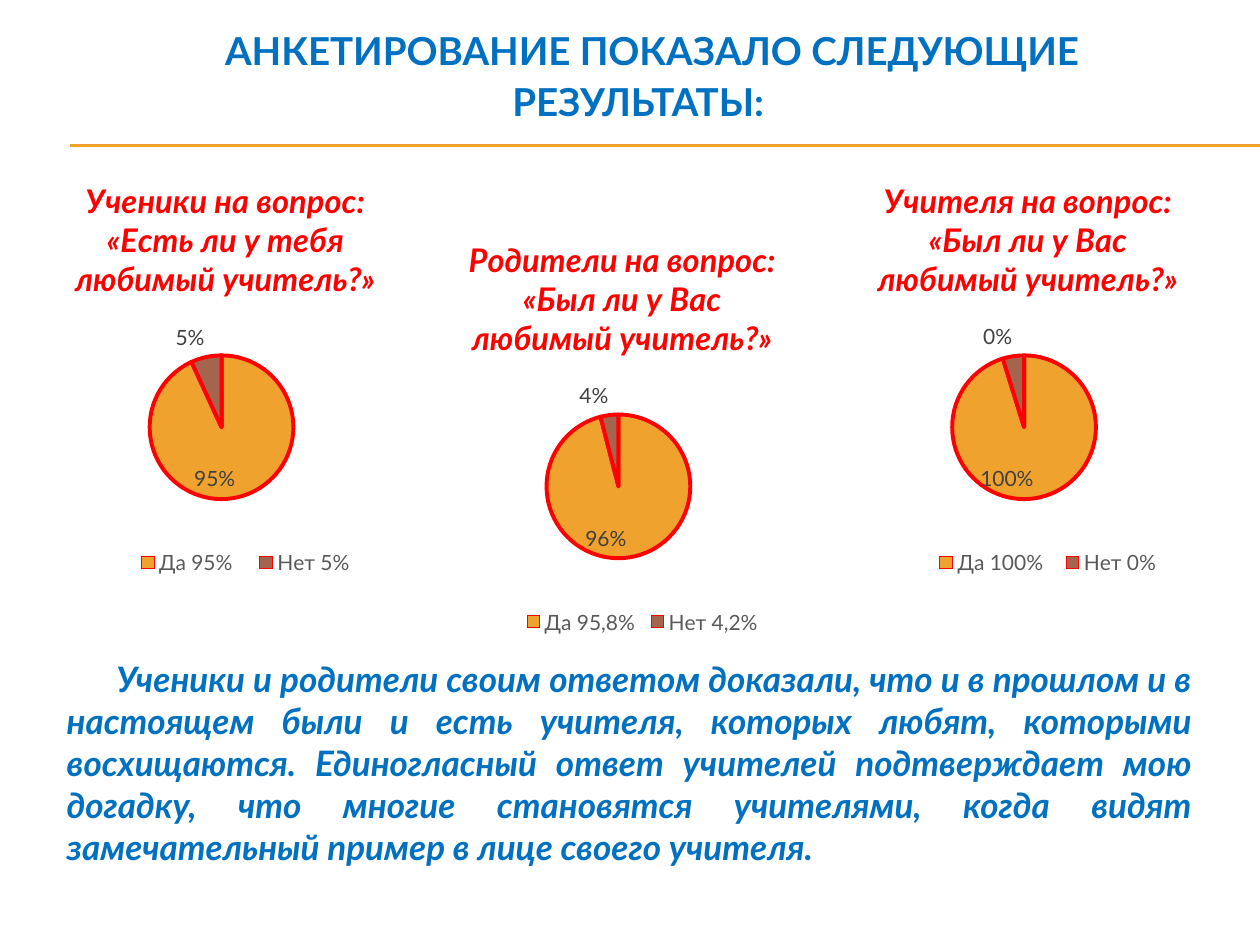
from dataclasses import dataclass

from lxml.etree import SubElement
from pptx import Presentation
from pptx.chart.data import CategoryChartData
from pptx.dml.color import RGBColor
from pptx.enum.chart import XL_CHART_TYPE, XL_LABEL_POSITION, XL_LEGEND_POSITION
from pptx.enum.shapes import MSO_CONNECTOR
from pptx.enum.text import MSO_ANCHOR, PP_ALIGN
from pptx.oxml import parse_xml
from pptx.oxml.ns import nsdecls, qn
from pptx.util import Pt


@dataclass(frozen=True)
class Theme:
    font: str = "Lato"
    heading: str = "0070C0"
    question: str = "FF0000"
    legend: str = "595959"
    label: str = "404040"
    rule: str = "F0A22E"
    slices: tuple = ("F0A22E", "A5644E")
    heading_size: float = 22
    question_size: float = 18.6
    conclusion_size: float = 20
    chart_size: float = 12


THEME = Theme()
CHART_SIZE = (229, 249)
# left, top, question, (category, value, label override) for each answer
SURVEYS = [
    (14.4, 88.6, "Ученики на вопрос: «Есть ли у тебя любимый учитель?»",
     [("Да 95%", 0.95, None), ("Нет 5%", 0.07, "5%")]),
    (241.2, 122.4, "Родители на вопрос: «Был ли у Вас любимый учитель?»",
     [("Да 95,8%", 0.96, None), ("Нет 4,2%", 0.04, None)]),
    (473, 88.6, "Учителя на вопрос: «Был ли у Вас любимый учитель?»",
     [("Да 100%", 1, None), ("Нет 0%", 0.05, "0%")]),
]
CONCLUSION = (
    "Ученики и родители своим ответом доказали, что и в прошлом и в настоящем "
    "были и есть учителя, которых любят, которыми восхищаются. Единогласный "
    "ответ учителей подтверждает мою догадку, что многие становятся учителями, "
    "когда видят замечательный пример в лице своего учителя."
)


def style_font(font, size, color, bold=False, italic=False):
    font.name = THEME.font
    font.size = Pt(size)
    font.color.rgb = RGBColor.from_string(color)
    font.bold = bold
    font.italic = italic


def add_text(slide, box, text, size, align, indent, italic=False):
    """Add a one-paragraph text box with a first-line indent."""
    frame = slide.shapes.add_textbox(*map(Pt, box)).text_frame
    frame.word_wrap = True
    paragraph = frame.paragraphs[0]
    paragraph.text = text
    paragraph.alignment = align
    paragraph._p.get_or_add_pPr().set("indent", str(Pt(indent)))
    style_font(paragraph.runs[0].font, size, THEME.heading, True, italic)
    return frame


def add_rule(slide, y):
    rule = slide.shapes.add_connector(
        MSO_CONNECTOR.STRAIGHT, Pt(40.3), Pt(y), Pt(720), Pt(y))
    rule.line.color.rgb = RGBColor.from_string(THEME.rule)
    rule.line.width = Pt(0.75)
    SubElement(rule._element.spPr, qn("a:effectLst"))


def manual_layout(x, y, w, h, inner=False):
    """Return a chart layout given in fractions of the chart area."""
    target = '<c:layoutTarget val="inner"/>' if inner else ""
    return parse_xml(
        f'<c:layout {nsdecls("c")}><c:manualLayout>{target}'
        '<c:xMode val="edge"/><c:yMode val="edge"/>'
        f'<c:x val="{x}"/><c:y val="{y}"/><c:w val="{w}"/><c:h val="{h}"/>'
        '</c:manualLayout></c:layout>')


def set_layout(element, layout, index):
    for old in element.findall(qn("c:layout")):
        element.remove(old)
    element.insert(index, layout)


def style_slice(point, color, position, override):
    point.format.fill.solid()
    point.format.fill.fore_color.rgb = RGBColor.from_string(color)
    point.format.line.color.rgb = RGBColor.from_string(THEME.question)
    point.format.line.width = Pt(2.25)
    label = point.data_label
    if override:
        paragraph = label.text_frame.paragraphs[0]
        paragraph.text = override
        font = paragraph.runs[0].font
    else:
        font = label.font
    style_font(font, THEME.chart_size, THEME.label)
    label.position = position


def add_survey_pie(slide, left, top, question, answers):
    data = CategoryChartData(number_format="0%")
    data.categories = [name for name, _, _ in answers]
    data.add_series("Series 1", [value for _, value, _ in answers])
    chart = slide.shapes.add_chart(
        XL_CHART_TYPE.PIE, Pt(left), Pt(top), *map(Pt, CHART_SIZE), data).chart
    style_font(chart.font, 10, "000000")

    chart.has_title = True
    title = chart.chart_title.text_frame.paragraphs[0]
    title.text = question
    style_font(title.runs[0].font, THEME.question_size, THEME.question, True, True)
    chart.chart_title.include_in_layout = False

    chart.has_legend = True
    legend = chart.legend
    legend.position = XL_LEGEND_POSITION.BOTTOM
    legend.include_in_layout = False
    style_font(legend.font, THEME.chart_size, THEME.legend)
    set_layout(legend._element, manual_layout(0.24, 0.89, 0.62, 0.09), 1)

    plot = chart.plots[0]
    plot.vary_by_categories = True
    plot.has_data_labels = True
    labels = plot.data_labels
    labels.show_value = True
    labels.show_percentage = False
    labels.number_format = "0%"
    labels.number_format_is_linked = False
    style_font(labels.font, THEME.chart_size, THEME.label)
    positions = (XL_LABEL_POSITION.INSIDE_END, XL_LABEL_POSITION.OUTSIDE_END)
    for index, (color, position) in enumerate(zip(THEME.slices, positions)):
        style_slice(plot.series[0].points[index], color, position, answers[index][2])
    plot_area = chart._chartSpace.chart.plotArea
    set_layout(plot_area, manual_layout(0.31, 0.46, 0.36, 0.33, inner=True), 0)


def main():
    presentation = Presentation()
    presentation.slide_width, presentation.slide_height = Pt(720), Pt(540)
    slide = presentation.slides.add_slide(presentation.slide_layouts[6])

    for y in (82.8, 83.5):
        add_rule(slide, y)
    heading = add_text(
        slide, (65.5, 0, 598.3, 72.7),
        "АНКЕТИРОВАНИЕ ПОКАЗАЛО СЛЕДУЮЩИЕ РЕЗУЛЬТАТЫ:",
        THEME.heading_size, PP_ALIGN.CENTER, 16)
    heading.vertical_anchor = MSO_ANCHOR.MIDDLE
    heading.margin_top = Pt(14.6)
    heading.paragraphs[0].line_spacing = Pt(29)

    for survey in SURVEYS:
        add_survey_pie(slide, *survey)
    add_text(slide, (31, 372.2, 657.4, 152.6), CONCLUSION,
             THEME.conclusion_size, PP_ALIGN.JUSTIFY, 28.5, italic=True)
    presentation.save("out.pptx")


if __name__ == "__main__":
    main()
